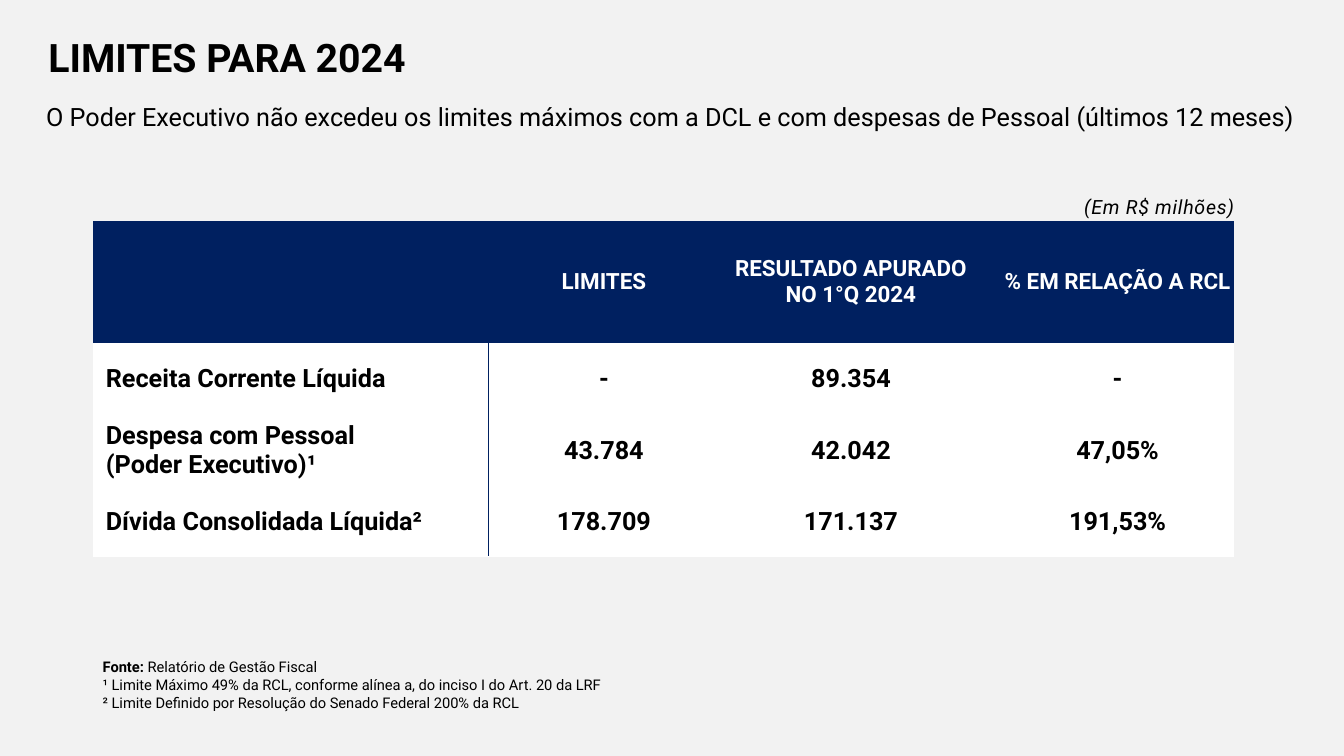
import pptx
import pptx.util
import pptx.dml.color
import pptx.enum.shapes
import pptx.enum.text
import pptx.oxml
import pptx.oxml.ns
from dataclasses import dataclass

Inches = pptx.util.Inches
ALIGN = pptx.enum.text.PP_ALIGN
ANCHOR = pptx.enum.text.MSO_ANCHOR


@dataclass(frozen=True)
class Theme:
    font: str = "Roboto"
    background: str = "F2F2F2"
    navy: str = "002060"
    white: str = "FFFFFF"
    black: str = "000000"
    title: float = 28
    body: float = 18
    header: float = 16
    unit: float = 14
    note: float = 10.5


theme = Theme()


def color(value):
    return pptx.dml.color.RGBColor.from_string(value)


def style(para, size, ink=theme.black, bold=False, italic=False, align=ALIGN.LEFT, spacing=1.0):
    para.alignment = align
    para.line_spacing = spacing
    para.font.name = theme.font
    para.font.size = pptx.util.Pt(size)
    para.font.color.rgb = color(ink)
    para.font.bold = bold
    para.font.italic = italic


# Deck and page
deck = pptx.Presentation()
deck.slide_width, deck.slide_height = Inches(13.33), Inches(7.5)
page = deck.slides.add_slide(deck.slide_layouts[5])
page.background.fill.solid()
page.background.fill.fore_color.rgb = color(theme.background)

# Title
title = page.shapes.title
title.left, title.top, title.width, title.height = map(Inches, (0.38, 0.2, 7.85, 0.79))
title.text_frame.text = "LIMITES PARA 2024"
title.text_frame.vertical_anchor = ANCHOR.MIDDLE
style(title.text_frame.paragraphs[0], theme.title, bold=True, spacing=0.9)

# Subtitle
subtitle = page.shapes.add_textbox(*map(Inches, (0.36, 0.83, 12.6, 0.59))).text_frame
subtitle.word_wrap = True
subtitle.margin_right = 0
subtitle.vertical_anchor = ANCHOR.MIDDLE
subtitle.text = ("O Poder Executivo não excedeu os limites máximos com a DCL "
                 "e com despesas de Pessoal (últimos 12 meses)")
style(subtitle.paragraphs[0], theme.body, spacing=1.2)

# Source and notes
notes = page.shapes.add_textbox(*map(Inches, (0.92, 6.48, 7.74, 0.63))).text_frame
notes.word_wrap = True
notes.text = ("\n¹ Limite Máximo 49% da RCL, conforme alínea a, do inciso I do Art. 20 da LRF"
              "\n² Limite Definido por Resolução do Senado Federal 200% da RCL")
for text, bold in (("Fonte: ", True), ("Relatório de Gestão Fiscal", False)):
    span = notes.paragraphs[0].add_run()
    span.text = text
    span.font.bold = bold
for para in notes.paragraphs:
    style(para, theme.note)

# Table of limits
rows = (
    ("", "LIMITES", "RESULTADO APURADO\nNO 1°Q 2024", "% EM RELAÇÃO A RCL"),
    ("Receita Corrente Líquida", "-", "89.354", "-"),
    ("Despesa com Pessoal\n(Poder Executivo)¹", "43.784", "42.042", "47,05%"),
    ("Dívida Consolidada Líquida²", "178.709", "171.137", "191,53%"),
)
column_widths = (4.11, 1.92, 2.98, 2.31)
row_heights = (1.21, 0.71, 0.71, 0.71)
table = page.shapes.add_table(
    len(rows), len(column_widths), Inches(0.92), Inches(2.19),
    Inches(sum(column_widths)), Inches(sum(row_heights))).table
table.horz_banding = False
for column, width in zip(table.columns, column_widths):
    column.width = Inches(width)
for row, height in zip(table.rows, row_heights):
    row.height = Inches(height)

for row_index, row in enumerate(rows):
    is_header = row_index == 0
    for column_index, text in enumerate(row):
        is_label = column_index == 0
        cell = table.cell(row_index, column_index)
        cell.text = text
        cell.vertical_anchor = ANCHOR.MIDDLE
        cell.margin_left = Inches(0.13 if is_label else 0.01)
        cell.margin_right = cell.margin_top = Inches(0.01)
        cell.margin_bottom = 0
        cell.fill.solid()
        cell.fill.fore_color.rgb = color(theme.navy if is_header else theme.white)
        for para in cell.text_frame.paragraphs:
            style(para, theme.header if is_header else theme.body,
                  ink=theme.white if is_header else theme.black, bold=True,
                  align=ALIGN.LEFT if is_label else ALIGN.CENTER)
        # Borderless cells
        properties = cell._tc.get_or_add_tcPr()
        for position, side in enumerate(("lnL", "lnR", "lnT", "lnB")):
            border = pptx.oxml.parse_xml(
                f'<a:{side} {pptx.oxml.ns.nsdecls("a")} w="0"><a:noFill/></a:{side}>')
            properties.insert(position, border)

# Unit of the values
unit = page.shapes.add_textbox(*map(Inches, (10.25, 1.84, 2.09, 0.42))).text_frame
unit.word_wrap = True
unit.text = "(Em R$ milhões)"
style(unit.paragraphs[0], theme.unit, italic=True, align=ALIGN.RIGHT, spacing=1.2)
unit.paragraphs[0].runs[0].font._element.set("spc", "50")

# Divider after the label column
divider = page.shapes.add_connector(
    pptx.enum.shapes.MSO_CONNECTOR.STRAIGHT, *map(Inches, (4.84, 3.32, 4.84, 5.52)))
divider.line.color.rgb = color(theme.navy)
divider.line.width = pptx.util.Pt(0.5)
divider._element.spPr.append(
    pptx.oxml.parse_xml(f'<a:effectLst {pptx.oxml.ns.nsdecls("a")}/>'))

deck.save("out.pptx")
